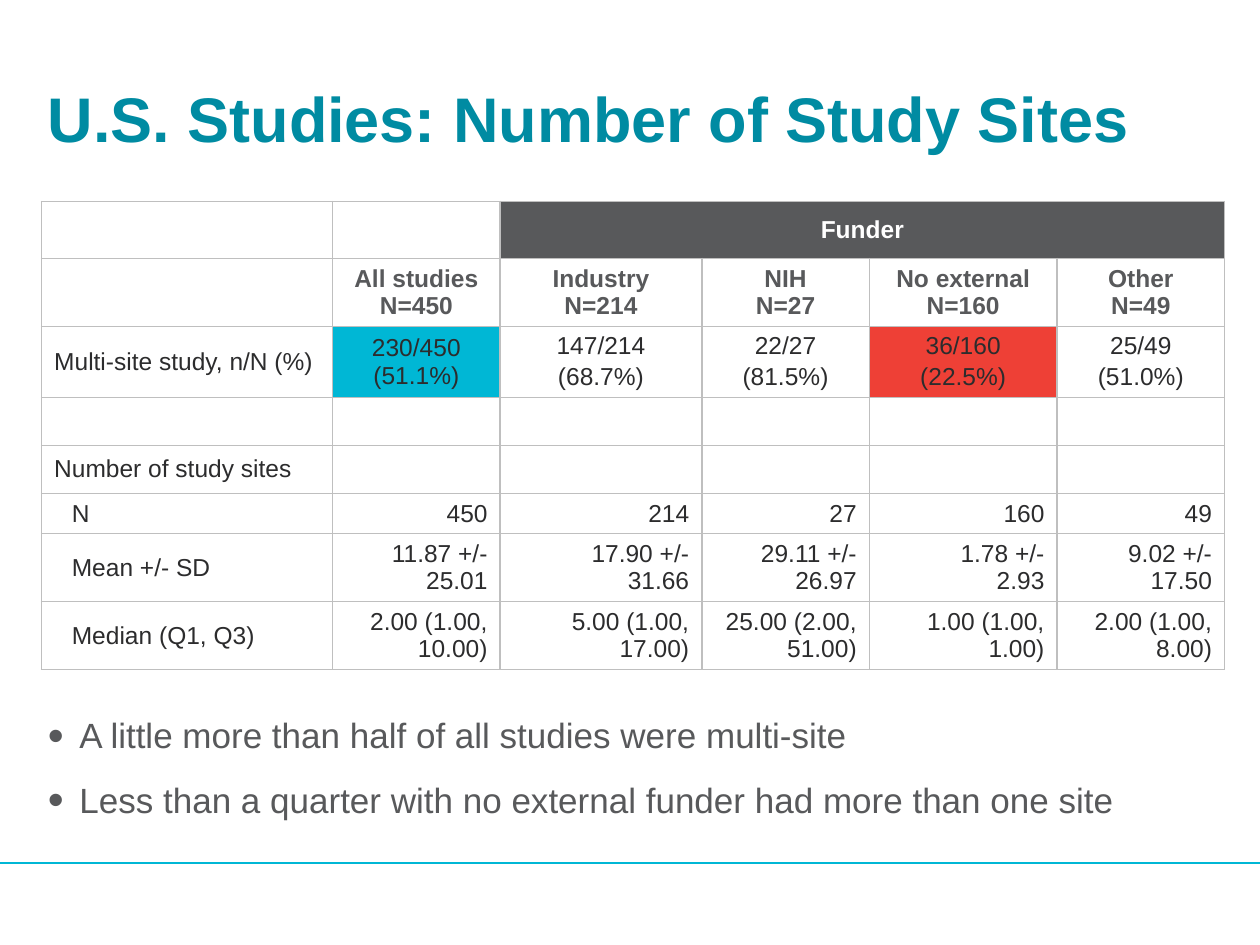
from dataclasses import dataclass
from typing import Optional

from lxml.etree import SubElement
from pptx import Presentation
from pptx.dml.color import RGBColor
from pptx.enum.shapes import MSO_CONNECTOR
from pptx.enum.text import MSO_ANCHOR, MSO_AUTO_SIZE, PP_ALIGN
from pptx.oxml.ns import qn
from pptx.util import Inches, Pt

COLORS = {
    "white": "FFFFFF",
    "gray": "58595B",
    "ink": "2C2C2D",
    "border": "BFBFBF",
    "cyan": "00B7D5",
    "teal": "008BA2",
    "red": "EE4036",
}
COLUMN_WIDTHS = [2.31, 1.33, 1.6, 1.33, 1.49, 1.33]
ROW_HEIGHTS = [0.45, 0.54, 0.56, 0.32, 0.32, 0.32, 0.54, 0.54]
BULLETS = [
    "A little more than half of all studies were multi-site",
    "Less than a quarter with no external funder had more than one site",
]


@dataclass
class TableRow:
    texts: list[str]
    align: PP_ALIGN = PP_ALIGN.RIGHT
    color: str = "ink"
    bold: bool = False
    indent: float = 0
    fills: Optional[dict[int, str]] = None


BLANK = [""] * 5
ROWS = [
    TableRow(["", "", "Funder", "", "", ""], PP_ALIGN.CENTER, "white", True,
             fills={2: "gray"}),
    TableRow(["", "All studies\vN=450", "Industry\vN=214", "NIH\vN=27",
              "No external\vN=160", "Other\vN=49"], PP_ALIGN.CENTER, "gray", True),
    TableRow(["Multi-site study, n/N (%)", "230/450 (51.1%)", "147/214\n(68.7%)",
              "22/27\n(81.5%)", "36/160\n(22.5%)", "25/49\n(51.0%)"],
             PP_ALIGN.CENTER, fills={1: "cyan", 4: "red"}),
    TableRow(["", *BLANK]),
    TableRow(["Number of study sites", *BLANK]),
    TableRow(["N", "450", "214", "27", "160", "49"], indent=0.14),
    TableRow(["Mean +/- SD", "11.87 +/- 25.01", "17.90 +/-\v31.66",
              "29.11 +/- 26.97", "1.78 +/-\v2.93", "9.02 +/- 17.50"], indent=0.14),
    TableRow(["Median (Q1, Q3)", "2.00 (1.00, 10.00)", "5.00 (1.00, 17.00)",
              "25.00 (2.00, 51.00)", "1.00 (1.00, 1.00)", "2.00 (1.00, 8.00)"],
             indent=0.14),
]


def rgb(name: str) -> RGBColor:
    return RGBColor.from_string(COLORS[name])


def format_font(font, size: float, color: str, bold: bool = False) -> None:
    for key, value in {"name": "Arial", "size": Pt(size), "bold": bold}.items():
        setattr(font, key, value)
    font.color.rgb = rgb(color)


def place(box, left: float, top: float, width: float, height: float) -> None:
    for key, value in {"left": left, "top": top, "width": width, "height": height}.items():
        setattr(box, key, Inches(value))


def prepare_frame(frame, anchor: MSO_ANCHOR) -> None:
    values = {"margin_left": 0, "margin_top": 0, "margin_right": 0, "margin_bottom": 0,
              "word_wrap": True, "auto_size": MSO_AUTO_SIZE.NONE,
              "vertical_anchor": anchor}
    for key, value in values.items():
        setattr(frame, key, value)


def add_borders(cell) -> None:
    properties = cell._tc.get_or_add_tcPr()
    for side in ("lnL", "lnR", "lnT", "lnB"):
        line = SubElement(properties, qn(f"a:{side}"), w=str(Pt(1)))
        fill = SubElement(line, qn("a:solidFill"))
        SubElement(fill, qn("a:srgbClr"), val=COLORS["border"])


def fill_cell(cell, row: TableRow, column: int) -> None:
    add_borders(cell)
    cell.fill.solid()
    cell.fill.fore_color.rgb = rgb((row.fills or {}).get(column, "white"))
    cell.vertical_anchor = MSO_ANCHOR.MIDDLE
    cell.text_frame.text = row.texts[column]
    for index, paragraph in enumerate(cell.text_frame.paragraphs):
        paragraph.alignment = row.align if column else PP_ALIGN.LEFT
        paragraph.space_before = Pt(1 if index else 0)
        paragraph.space_after = Pt(1)
        if column == 0 and row.indent:
            paragraph._p.get_or_add_pPr().set("marL", str(Inches(row.indent)))
        for span in paragraph.runs or [paragraph.add_run()]:
            format_font(span.font, 14, row.color, row.bold)


def add_sites_table(page) -> None:
    table = page.shapes.add_table(
        len(ROWS), len(COLUMN_WIDTHS), Inches(0.33), Inches(1.6),
        Inches(sum(COLUMN_WIDTHS)), Inches(sum(ROW_HEIGHTS))).table
    table.first_row = table.horz_banding = False
    for column, width in zip(table.columns, COLUMN_WIDTHS):
        column.width = Inches(width)
    for index, (row, height) in enumerate(zip(ROWS, ROW_HEIGHTS)):
        table.rows[index].height = Inches(height)
        for column in range(len(COLUMN_WIDTHS)):
            fill_cell(table.cell(index, column), row, column)
    table.cell(0, 2).merge(table.cell(0, 5))


def add_title(page) -> None:
    title = page.shapes.title
    place(title, 0.38, 0.5, 9.25, 0.86)
    prepare_frame(title.text_frame, MSO_ANCHOR.MIDDLE)
    title.text_frame.text = "U.S. Studies: Number of Study Sites"
    paragraph = title.text_frame.paragraphs[0]
    paragraph.alignment = PP_ALIGN.LEFT
    format_font(paragraph.runs[0].font, 36, "teal", True)


def add_findings(page) -> None:
    body = page.placeholders[1]
    place(body, 0.38, 5.69, 9.25, 1.22)
    prepare_frame(body.text_frame, MSO_ANCHOR.TOP)
    body.text_frame.text = "\n".join(BULLETS)
    for index, paragraph in enumerate(body.text_frame.paragraphs):
        paragraph.line_spacing = 0.95
        paragraph.space_before = Pt(14 if index else 0)
        properties = paragraph._p.get_or_add_pPr()
        properties.set("marL", str(Inches(0.25)))
        properties.set("indent", str(-Inches(0.25)))
        SubElement(properties, qn("a:buSzPct"), val="130000")
        SubElement(properties, qn("a:buFont"), typeface="Arial")
        SubElement(properties, qn("a:buChar"), char="•")
        format_font(paragraph.runs[0].font, 20, "gray")


def add_footer_line(page) -> None:
    line = page.shapes.add_connector(
        MSO_CONNECTOR.STRAIGHT, 0, Inches(6.85), Inches(10), Inches(6.85))
    line.line.color.rgb = rgb("cyan")
    line.line.width = Pt(0.75)
    SubElement(line._element.spPr, qn("a:effectLst"))


def main() -> None:
    deck = Presentation()
    deck.slide_width, deck.slide_height = Inches(10), Inches(7.5)
    page = deck.slides.add_slide(deck.slide_layouts[1])
    add_footer_line(page)
    add_sites_table(page)
    add_findings(page)
    add_title(page)
    deck.save("out.pptx")


if __name__ == "__main__":
    main()
